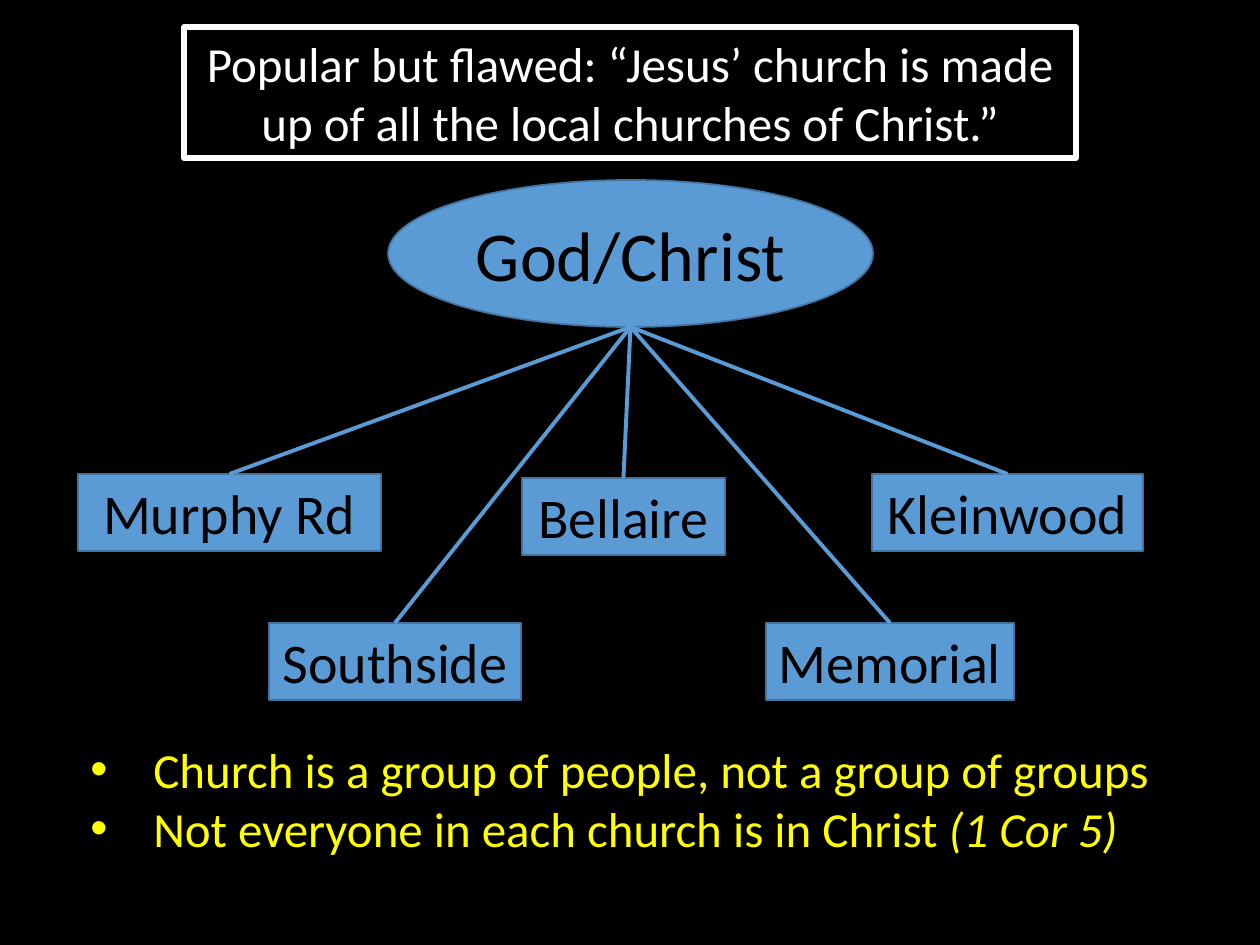
from lxml.etree import SubElement
from pptx import Presentation
from pptx.dml.color import RGBColor
from pptx.enum.shapes import MSO_CONNECTOR, MSO_SHAPE
from pptx.enum.text import MSO_ANCHOR, MSO_AUTO_SIZE, PP_ALIGN
from pptx.oxml.ns import qn
from pptx.util import Pt

TITLE = "Popular but flawed: “Jesus’ church is made up of all the local churches of Christ.”"
TITLE_AREA = (184, 27, 892, 131)
HEAD = "God/Christ"
HEAD_AREA = (388, 180, 485, 147)
CHURCH_HEIGHT = 77
CHURCHES = [
    ("Murphy Rd", 78, 474, 303),
    ("Bellaire", 522, 478, 203),
    ("Kleinwood", 872, 474, 271),
    ("Southside", 269, 623, 252),
    ("Memorial", 766, 623, 248),
]
POINTS_AREA = (78, 733, 1106, 131)
POINTS = [
    [("Church is a group of people, not a group of groups", False)],
    [("Not everyone in each church is in Christ ", False), ("(1 Cor 5)", True)],
]
BLACK, WHITE, YELLOW = "000000", "FFFFFF", "FFFF00"
BLUE, EDGE = "5B9BD5", "43739E"


def px(value):
    return round(value * 914400 / 126)


def color(value):
    return RGBColor.from_string(value)


def style(font, size, fill):
    font.name = "Calibri"
    font.size = Pt(size)
    font.color.rgb = color(fill)


def add_box(page, kind, area, text, size, ink, fill, edge, width):
    box = page.shapes.add_shape(kind, *map(px, area))
    box.shadow.inherit = False
    if fill:
        box.fill.solid()
        box.fill.fore_color.rgb = color(fill)
    else:
        box.fill.background()
    box.line.color.rgb = color(edge)
    box.line.width = Pt(width)
    frame = box.text_frame
    frame.word_wrap = True
    frame.vertical_anchor = MSO_ANCHOR.MIDDLE
    frame.text = text
    para = frame.paragraphs[0]
    para.alignment = PP_ALIGN.CENTER
    style(para.runs[0].font, size, ink)
    return box


def add_link(page, head, church):
    start = (head.left + head.width // 2, head.top + head.height)
    link = page.shapes.add_connector(MSO_CONNECTOR.STRAIGHT, *start, *start)
    link.end_connect(church, 0)
    link.line.color.rgb = color(BLUE)
    link.line.width = Pt(2.25)
    SubElement(link._element.spPr, qn("a:effectLst"))


def add_points(page):
    frame = page.shapes.add_textbox(*map(px, POINTS_AREA)).text_frame
    frame.word_wrap = True
    frame.auto_size = MSO_AUTO_SIZE.SHAPE_TO_FIT_TEXT
    for index, spans in enumerate(POINTS):
        para = frame.add_paragraph() if index else frame.paragraphs[0]
        properties = para._p.get_or_add_pPr()
        properties.set("marL", str(px(63)))
        properties.set("indent", str(px(-63)))
        SubElement(properties, qn("a:buFont"), typeface="Arial")
        SubElement(properties, qn("a:buChar"), char="•")
        for text, italic in spans:
            span = para.add_run()
            span.text = text
            style(span.font, 28, YELLOW)
            if italic:
                span.font.italic = True


def main():
    deck = Presentation()
    deck.slide_width, deck.slide_height = px(1260), px(945)
    page = deck.slides.add_slide(deck.slide_layouts[6])
    page.background.fill.solid()
    page.background.fill.fore_color.rgb = color(BLACK)

    head = add_box(page, MSO_SHAPE.OVAL, HEAD_AREA, HEAD, 40, BLACK, BLUE, EDGE, 1)
    churches = [
        add_box(page, MSO_SHAPE.RECTANGLE, (left, top, width, CHURCH_HEIGHT),
                name, 32, BLACK, BLUE, EDGE, 1)
        for name, left, top, width in CHURCHES
    ]
    for church in churches:
        add_link(page, head, church)
    add_points(page)
    title = add_box(page, MSO_SHAPE.RECTANGLE, TITLE_AREA, TITLE, 28, WHITE, None, WHITE, 3)
    title.text_frame.vertical_anchor = MSO_ANCHOR.TOP
    title.text_frame.auto_size = MSO_AUTO_SIZE.SHAPE_TO_FIT_TEXT
    deck.save("out.pptx")


if __name__ == "__main__":
    main()
